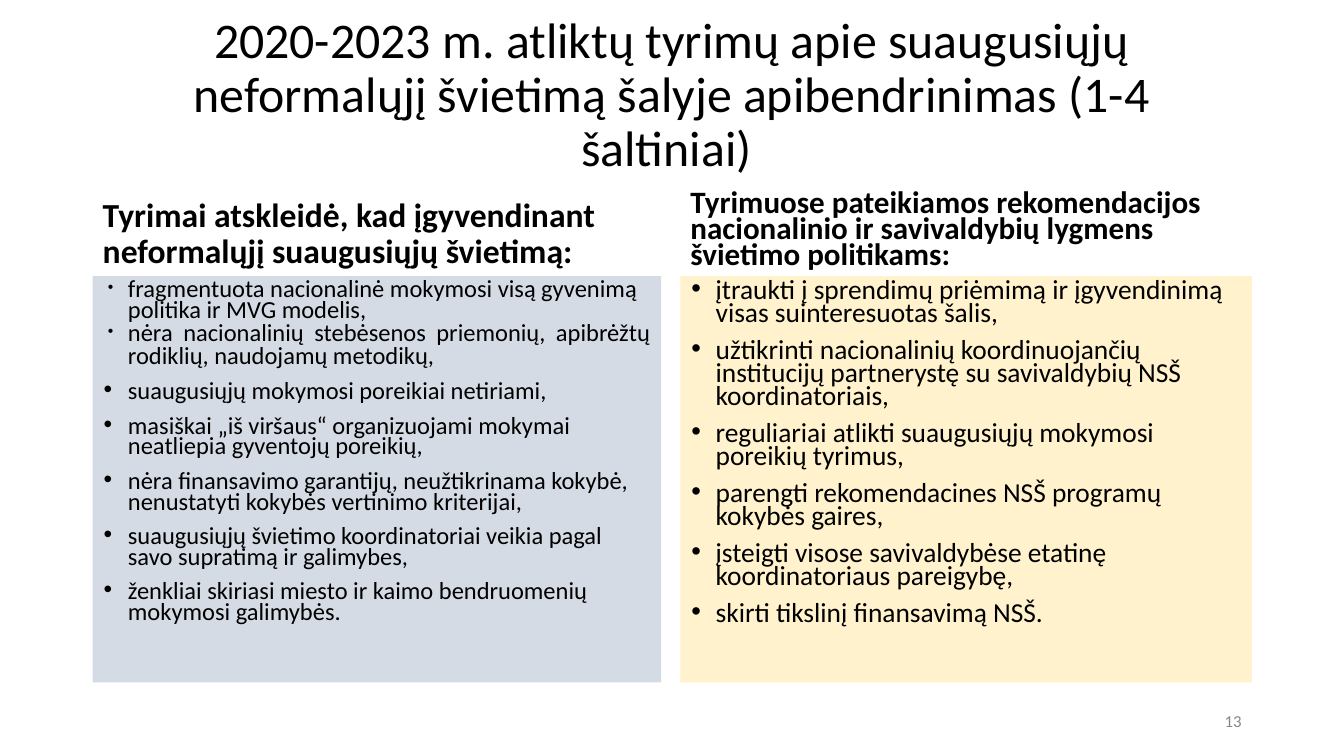
import lxml.etree
import pptx
import pptx.dml.color
import pptx.enum.text
import pptx.oxml.ns
import pptx.util

Pt = pptx.util.Pt
RGBColor = pptx.dml.color.RGBColor
PP_ALIGN = pptx.enum.text.PP_ALIGN
ANCHOR = pptx.enum.text.MSO_ANCHOR

BLACK = RGBColor(0x00, 0x00, 0x00)
GREY = RGBColor(0x88, 0x88, 0x88)
BLUE_PANEL = RGBColor(0xD5, 0xDB, 0xE5)
YELLOW_PANEL = RGBColor(0xFF, 0xF2, 0xCC)

TITLE = ("2020-2023 m. atliktų tyrimų apie suaugusiųjų neformalųjį švietimą "
         "šalyje apibendrinimas (1-4 šaltiniai) ")
FINDINGS_HEADING = "Tyrimai atskleidė, kad įgyvendinant neformalųjį suaugusiųjų švietimą:"
FINDINGS = [
    "fragmentuota nacionalinė mokymosi visą gyvenimą politika ir MVG modelis,",
    "nėra nacionalinių stebėsenos priemonių, apibrėžtų rodiklių, naudojamų metodikų,",
    "suaugusiųjų mokymosi poreikiai netiriami,",
    "masiškai „iš viršaus“ organizuojami mokymai neatliepia gyventojų poreikių,",
    "nėra finansavimo garantijų, neužtikrinama kokybė, nenustatyti kokybės vertinimo kriterijai,",
    "suaugusiųjų švietimo koordinatoriai veikia pagal savo supratimą ir galimybes,",
    "ženkliai skiriasi miesto ir kaimo bendruomenių mokymosi galimybės.",
]
ADVICE_HEADING = ("Tyrimuose pateikiamos rekomendacijos nacionalinio ir savivaldybių "
                  "lygmens švietimo politikams:")
ADVICE = [
    "įtraukti į sprendimų priėmimą ir įgyvendinimą visas suinteresuotas šalis,",
    "užtikrinti nacionalinių koordinuojančių institucijų partnerystę su savivaldybių NSŠ koordinatoriais,",
    "reguliariai atlikti suaugusiųjų mokymosi poreikių tyrimus,",
    "parengti rekomendacines NSŠ programų kokybės gaires,",
    "įsteigti visose savivaldybėse etatinę koordinatoriaus pareigybę,",
    "skirti tikslinį finansavimą NSŠ.",
]


def place(box, left, top, width, height, anchor):
    box.left, box.top, box.width, box.height = map(Pt, (left, top, width, height))
    frame = box.text_frame
    frame.word_wrap = True
    frame.auto_size = pptx.enum.text.MSO_AUTO_SIZE.NONE
    frame.vertical_anchor = anchor
    frame.margin_left = frame.margin_right = Pt(7.2)
    frame.margin_top = frame.margin_bottom = Pt(3.6)


def format_paragraph(paragraph, size, spacing=1.0, before=0, align=PP_ALIGN.LEFT,
                     bold=False, color=BLACK):
    paragraph.alignment = align
    paragraph.line_spacing = spacing
    paragraph.space_before = Pt(before)
    paragraph.space_after = Pt(0)
    font = paragraph.font
    font.name, font.size, font.bold = "Calibri", Pt(size), bold
    font.color.rgb = color


def add_bullet(paragraph, hanging, percent):
    properties = paragraph._p.get_or_add_pPr()
    properties.set("marL", str(Pt(18)))
    properties.set("indent", str(-Pt(hanging)))

    def add(parent, tag, **attributes):
        return lxml.etree.SubElement(parent, pptx.oxml.ns.qn(tag), attributes)

    add(add(properties, "a:buClr"), "a:srgbClr", val=str(BLACK))
    add(properties, "a:buSzPct", val=str(percent * 1000))
    add(properties, "a:buFont", typeface="Arial")
    add(properties, "a:buChar", char="•")


def fill_heading(heading, text, left, width, size, spacing):
    place(heading, left, 132.5, width, 64.8, ANCHOR.BOTTOM)
    heading.text_frame.text = text
    format_paragraph(heading.text_frame.paragraphs[0], size, spacing, bold=True)


def fill_list(panel, items, left, width, size, color, small_bullets=0):
    """Fill a coloured list; the first small_bullets items sit close together."""
    place(panel, left, 197.3, width, 290.2, ANCHOR.TOP)
    panel.fill.solid()
    panel.fill.fore_color.rgb = color
    panel.text_frame.text = "\n".join(items)
    for index, paragraph in enumerate(panel.text_frame.paragraphs):
        small = index < small_bullets
        justified = small and index > 0
        add_bullet(paragraph, 14.4 if small else 17.3, 64 if small else 100)
        format_paragraph(paragraph, size, 0.8 if justified else 0.7,
                         0 if small or index == 0 else 10,
                         PP_ALIGN.JUSTIFY if justified else PP_ALIGN.LEFT)


def add_page_number(slide, number):
    box = slide.shapes.add_textbox(0, 0, 0, 0)
    place(box, 678, 500.5, 216, 28.8, ANCHOR.MIDDLE)
    box.text_frame.text = number
    format_paragraph(box.text_frame.paragraphs[0], 12, align=PP_ALIGN.RIGHT, color=GREY)


def main():
    deck = pptx.Presentation()
    deck.slide_width, deck.slide_height = Pt(960), Pt(540)
    slide = deck.slides.add_slide(deck.slide_layouts.get_by_name("Comparison"))
    title, findings_heading, findings, advice_heading, advice = slide.placeholders

    place(title, 66.2, 16.6, 828, 104.4, ANCHOR.MIDDLE)
    title.text_frame.text = TITLE
    format_paragraph(title.text_frame.paragraphs[0], 35.6, 0.9, align=PP_ALIGN.CENTER)

    fill_heading(findings_heading, FINDINGS_HEADING, 66.2, 406.1, 24, 0.9)
    fill_list(findings, FINDINGS, 66.2, 406.1, 17.5, BLUE_PANEL, small_bullets=2)
    fill_heading(advice_heading, ADVICE_HEADING, 486, 408.2, 22.2, 0.7)
    fill_list(advice, ADVICE, 486, 408.2, 19.6, YELLOW_PANEL)
    add_page_number(slide, "13")
    deck.save("out.pptx")


if __name__ == "__main__":
    main()
